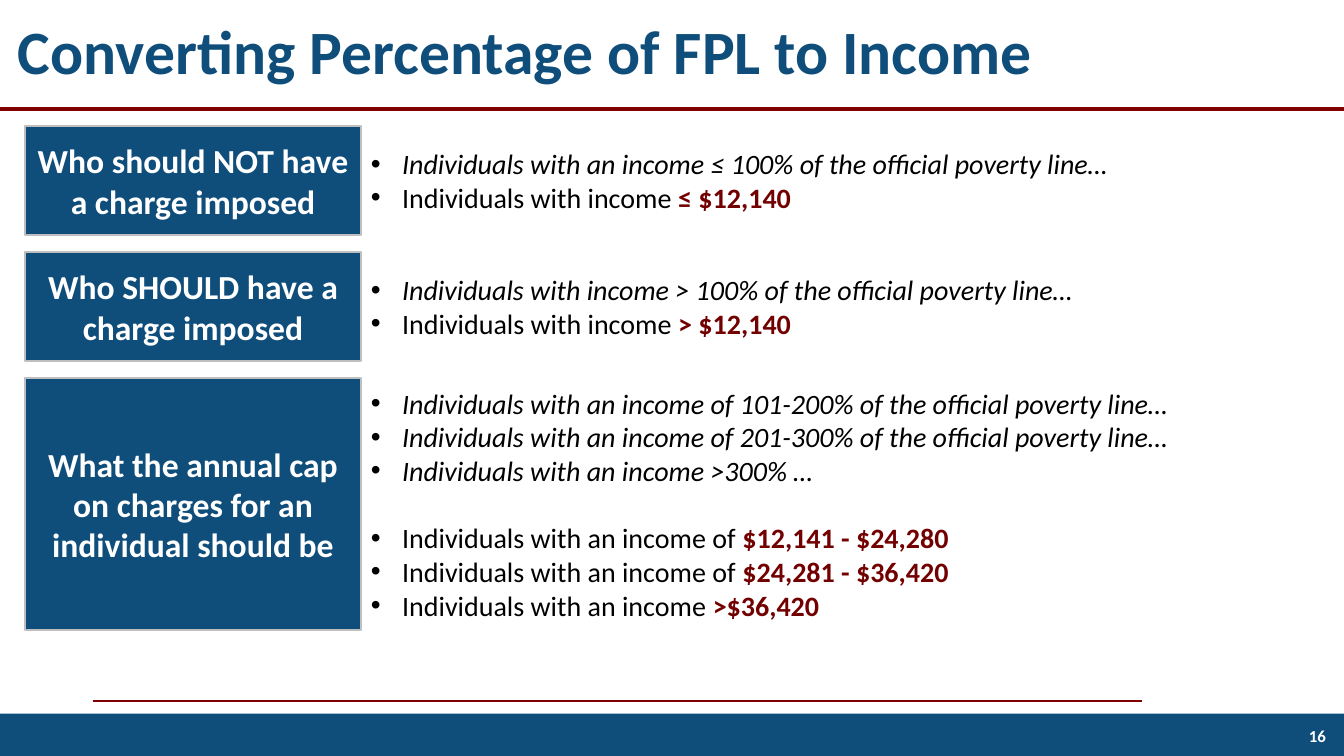
from lxml import etree
from pptx import Presentation
from pptx.dml.color import RGBColor
from pptx.enum import shapes, text
from pptx.oxml import ns
from pptx.util import Inches, Pt

NAVY = RGBColor(0x0F, 0x4D, 0x7B)
MAROON = RGBColor(0x80, 0x00, 0x00)
DARK_RED = RGBColor(0x73, 0x00, 0x00)
SILVER = RGBColor(0xC0, 0xBF, 0xBF)
WHITE = RGBColor(0xFF, 0xFF, 0xFF)
BLACK = RGBColor(0x00, 0x00, 0x00)

TITLE = "Converting Percentage of FPL to Income"
PAGE_NUMBER = "16"
# Each row: label, height, rules by poverty line, rules by (wording, amount), gap in points
ROWS = [
    ("Who should NOT have a charge imposed", 1.08,
     ["Individuals with an income ≤ 100% of the official poverty line…"],
     [("Individuals with income ", "≤ $12,140")], 0),
    ("Who SHOULD have a charge imposed", 1.08,
     ["Individuals with income > 100% of the official poverty line…"],
     [("Individuals with income ", "> $12,140")], 0),
    ("What the annual cap on charges for an individual should be", 2.5,
     ["Individuals with an income of 101-200% of the official poverty line…",
      "Individuals with an income of 201-300% of the official poverty line…",
      "Individuals with an income >300% …"],
     [("Individuals with an income of ", "$12,141 - $24,280"),
      ("Individuals with an income of ", "$24,281 - $36,420"),
      ("Individuals with an income ", ">$36,420")], 24),
]
# Each rule: left, right, height on the page, width in points
RULES = [(0.92, 11.33, 6.95, 1.5), (0, 13.33, 1.08, 3)]

PAGE_WIDTH, PAGE_HEIGHT = 13.33, 7.5
FOOTER_TOP = 7.08
LABEL_LEFT, LABEL_WIDTH = 0.25, 3.33
DETAIL_LEFT, DETAIL_WIDTH = LABEL_LEFT + LABEL_WIDTH, 9.58
FIRST_ROW_TOP, ROW_GAP = 1.25, 0.17
BULLET_INDENT = Inches(0.31)


def style(font, size, color, bold=False, italic=False):
    font.name = "Calibri"
    font.size = Pt(size)
    font.color.rgb = color
    font.bold = bold
    font.italic = italic


def prepare_frame(shape):
    frame = shape.text_frame
    frame.word_wrap = True
    frame.vertical_anchor = text.MSO_ANCHOR.MIDDLE
    return frame


def add_box(page, left, top, width, height):
    return page.shapes.add_textbox(Inches(left), Inches(top), Inches(width), Inches(height))


def add_block(page, left, top, width, height):
    """Add a navy rectangle without outline or shadow."""
    block = page.shapes.add_shape(shapes.MSO_SHAPE.RECTANGLE, Inches(left), Inches(top),
                                  Inches(width), Inches(height))
    block.shadow.inherit = False
    block.fill.solid()
    block.fill.fore_color.rgb = NAVY
    block.line.fill.background()
    return block


def write_line(shape, words, size, color, align):
    para = prepare_frame(shape).paragraphs[0]
    para.text = words
    para.alignment = align
    style(para.runs[0].font, size, color, bold=True)
    return para


def add_rule(page, left, right, top, weight):
    rule = page.shapes.add_connector(shapes.MSO_CONNECTOR.STRAIGHT, Inches(left), Inches(top),
                                     Inches(right), Inches(top))
    rule.line.color.rgb = MAROON
    rule.line.width = Pt(weight)
    etree.SubElement(rule._element.spPr, ns.qn("a:effectLst"))


def add_bullet(para):
    props = para._p.get_or_add_pPr()
    props.set("marL", str(BULLET_INDENT))
    props.set("indent", str(-BULLET_INDENT))
    etree.SubElement(props, ns.qn("a:buFont")).set("typeface", "Arial")
    etree.SubElement(props, ns.qn("a:buChar")).set("char", "•")


def fill_details(box, percentages, amounts, gap):
    frame = prepare_frame(box)
    frame.text = "\n".join(percentages + [wording for wording, _ in amounts])
    for para in frame.paragraphs:
        add_bullet(para)
    for para in frame.paragraphs[:len(percentages)]:
        style(para.runs[0].font, 20, BLACK, italic=True)
    amount_paras = frame.paragraphs[len(percentages):]
    for para, (_, amount) in zip(amount_paras, amounts):
        style(para.runs[0].font, 20, BLACK)
        span = para.add_run()
        span.text = amount
        style(span.font, 20, DARK_RED, bold=True)
    if gap:
        amount_paras[0].space_before = Pt(gap)


def main():
    deck = Presentation()
    deck.slide_width, deck.slide_height = Inches(PAGE_WIDTH), Inches(PAGE_HEIGHT)
    page = deck.slides.add_slide(deck.slide_layouts[6])

    add_block(page, 0, FOOTER_TOP, PAGE_WIDTH, PAGE_HEIGHT - FOOTER_TOP)
    for rule in RULES:
        add_rule(page, *rule)
    title = write_line(add_box(page, 0.08, 0, 13.08, 1.08), TITLE, 44, NAVY,
                       text.PP_ALIGN.LEFT)
    title.line_spacing = 0.9

    top = FIRST_ROW_TOP
    for label, height, percentages, amounts, gap in ROWS:
        block = add_block(page, LABEL_LEFT, top, LABEL_WIDTH, height)
        block.line.color.rgb = SILVER
        block.line.width = Pt(1)
        write_line(block, label, 24, WHITE, text.PP_ALIGN.CENTER)
        details = add_box(page, DETAIL_LEFT, top, DETAIL_WIDTH, height)
        fill_details(details, percentages, amounts, gap)
        top += height + ROW_GAP

    write_line(add_box(page, 10.25, 7.1, 3, 0.4), PAGE_NUMBER, 12, WHITE,
               text.PP_ALIGN.RIGHT)
    deck.save("out.pptx")


if __name__ == "__main__":
    main()
